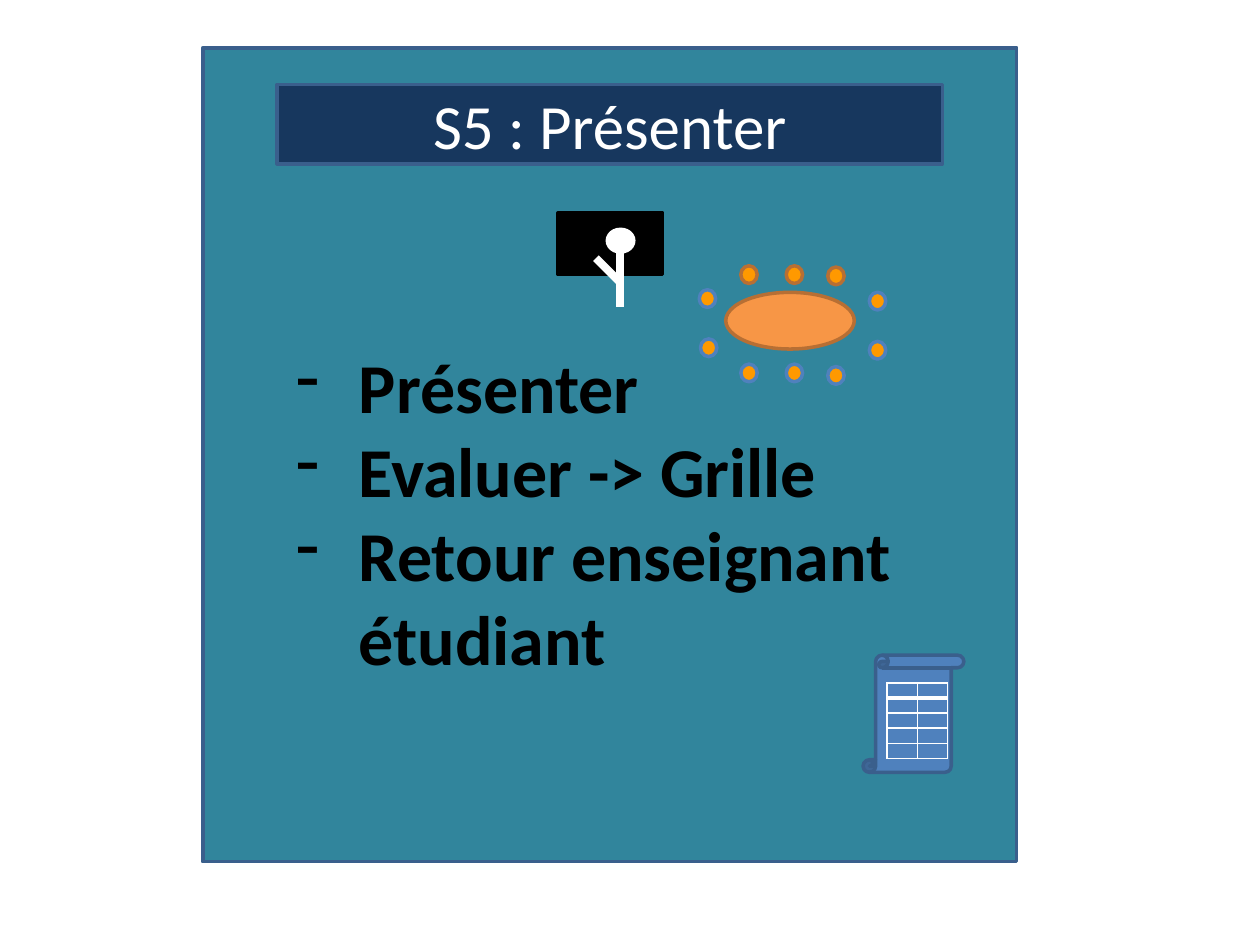
from lxml.etree import SubElement
from pptx import Presentation
from pptx.dml.color import RGBColor
from pptx.enum.shapes import MSO_CONNECTOR, MSO_SHAPE
from pptx.enum.text import MSO_ANCHOR, MSO_AUTO_SIZE, PP_ALIGN
from pptx.oxml.ns import qn
from pptx.util import Inches, Pt

COLORS = {
    "card": "31859C", "navy": "17375E", "edge": "3A5F8C", "blue": "4F81BD",
    "table": "F79646", "brown": "B76F34", "seat": "FF9900",
    "black": "000000", "white": "FFFFFF",
}


def style(s, fill, line):
    s.fill.solid()
    s.fill.fore_color.rgb = RGBColor.from_string(COLORS[fill])
    s.line.color.rgb = RGBColor.from_string(COLORS[line])
    s.line.width = Pt(2)


def add_shape(parent, kind, box, fill, line):
    sp = parent.add_shape(kind, *[Inches(v) for v in box])
    sp.shadow.inherit = False
    style(sp, fill, line)
    return sp


prs = Presentation()
prs.slide_width, prs.slide_height = Inches(10), Inches(7.5)
slide = prs.slides.add_slide(prs.slide_layouts[5])
shapes = slide.shapes

# Card
add_shape(shapes, MSO_SHAPE.RECTANGLE, (1.61, 0.38, 6.46, 6.46), "card", "edge")

# Title bar, brought in front of the card
title = shapes.title
title.left, title.top, title.width, title.height = [Inches(v) for v in (2.2, 0.67, 5.28, 0.63)]
style(title, "navy", "edge")
shapes._spTree.append(title._element)
tf = title.text_frame
tf.text = "S5 : Présenter"
tf.auto_size = MSO_AUTO_SIZE.NONE
tf.vertical_anchor = MSO_ANCHOR.MIDDLE
p = tf.paragraphs[0]
p.alignment = PP_ALIGN.CENTER
r = p.runs[0]
for name, value in {"size": Pt(36), "name": "Calibri"}.items():
    setattr(r.font, name, value)
r.font.color.rgb = RGBColor.from_string(COLORS["white"])

# Speaker in front of a board
speaker = shapes.add_group_shape().shapes
add_shape(speaker, MSO_SHAPE.RECTANGLE, (4.43, 1.69, 0.83, 0.49), "black", "black")
add_shape(speaker, MSO_SHAPE.OVAL, (4.82, 1.82, 0.21, 0.18), "white", "white")
for limb in [(4.92, 2, 4.92, 2.44), (4.73, 2.05, 4.91, 2.23)]:  # body, arm
    cx = speaker.add_connector(MSO_CONNECTOR.STRAIGHT, *[Inches(v) for v in limb])
    cx.line.color.rgb = RGBColor.from_string(COLORS["white"])
    cx.line.width = Pt(4.5)
    SubElement(cx._element.spPr, qn("a:effectLst"))

# Meeting table with seats around it
meeting = shapes.add_group_shape().shapes
add_shape(meeting, MSO_SHAPE.OVAL, (5.76, 2.32, 1.02, 0.45), "table", "brown")
seats = {
    "brown": [(5.88, 2.11), (6.24, 2.11), (6.57, 2.12)],
    "blue": [(5.88, 2.89), (6.24, 2.89), (6.57, 2.91),
             (5.55, 2.3), (5.56, 2.69), (6.9, 2.32), (6.9, 2.71)],
}
for line, places in seats.items():
    for x, y in places:
        add_shape(meeting, MSO_SHAPE.OVAL, (x, y, 0.13, 0.14), "seat", line)

# Bulleted steps
tf = shapes.add_textbox(Inches(2.25), Inches(2.68), Inches(5.4), Inches(2.79)).text_frame
tf.word_wrap = True
tf.auto_size = MSO_AUTO_SIZE.SHAPE_TO_FIT_TEXT
for i, step in enumerate(["Présenter", "Evaluer -> Grille", "Retour enseignant étudiant"]):
    p = tf.add_paragraph() if i else tf.paragraphs[0]
    pPr = p._p.get_or_add_pPr()
    pPr.set("marL", str(Inches(0.5)))
    pPr.set("indent", str(-Inches(0.5)))
    SubElement(pPr, qn("a:buFontTx"))
    SubElement(pPr, qn("a:buChar"), char="-")
    r = p.add_run()
    r.text = step
    for name, value in {"size": Pt(40), "name": "Calibri", "bold": True}.items():
        setattr(r.font, name, value)
    r.font.color.rgb = RGBColor.from_string(COLORS["black"])

# Scroll holding the evaluation grid
add_shape(shapes, MSO_SHAPE.VERTICAL_SCROLL, (6.85, 5.2, 0.8, 0.93), "blue", "edge")
ROWS, COLS = 5, 2
grid = shapes.add_table(ROWS, COLS, Inches(7.04), Inches(5.42), Inches(0.48), Inches(0.6)).table
for row in range(ROWS):
    for col in range(COLS):
        cell = grid.cell(row, col)
        for side in ("left", "right", "top", "bottom"):
            setattr(cell, f"margin_{side}", 0)
        SubElement(cell.text_frame.paragraphs[0]._p, qn("a:endParaRPr"), sz="400")
        tcPr = cell._tc.get_or_add_tcPr()
        for side in ("L", "R", "T", "B"):
            heavy = (row, side) in [(0, "B"), (1, "T")]  # rule under the header
            ln = SubElement(tcPr, qn(f"a:ln{side}"), w=str(Pt(3 if heavy else 1)))
            fill = SubElement(ln, qn("a:solidFill"))
            SubElement(fill, qn("a:srgbClr"), val=COLORS["white"])
        cell.fill.background()

prs.save("out.pptx")
